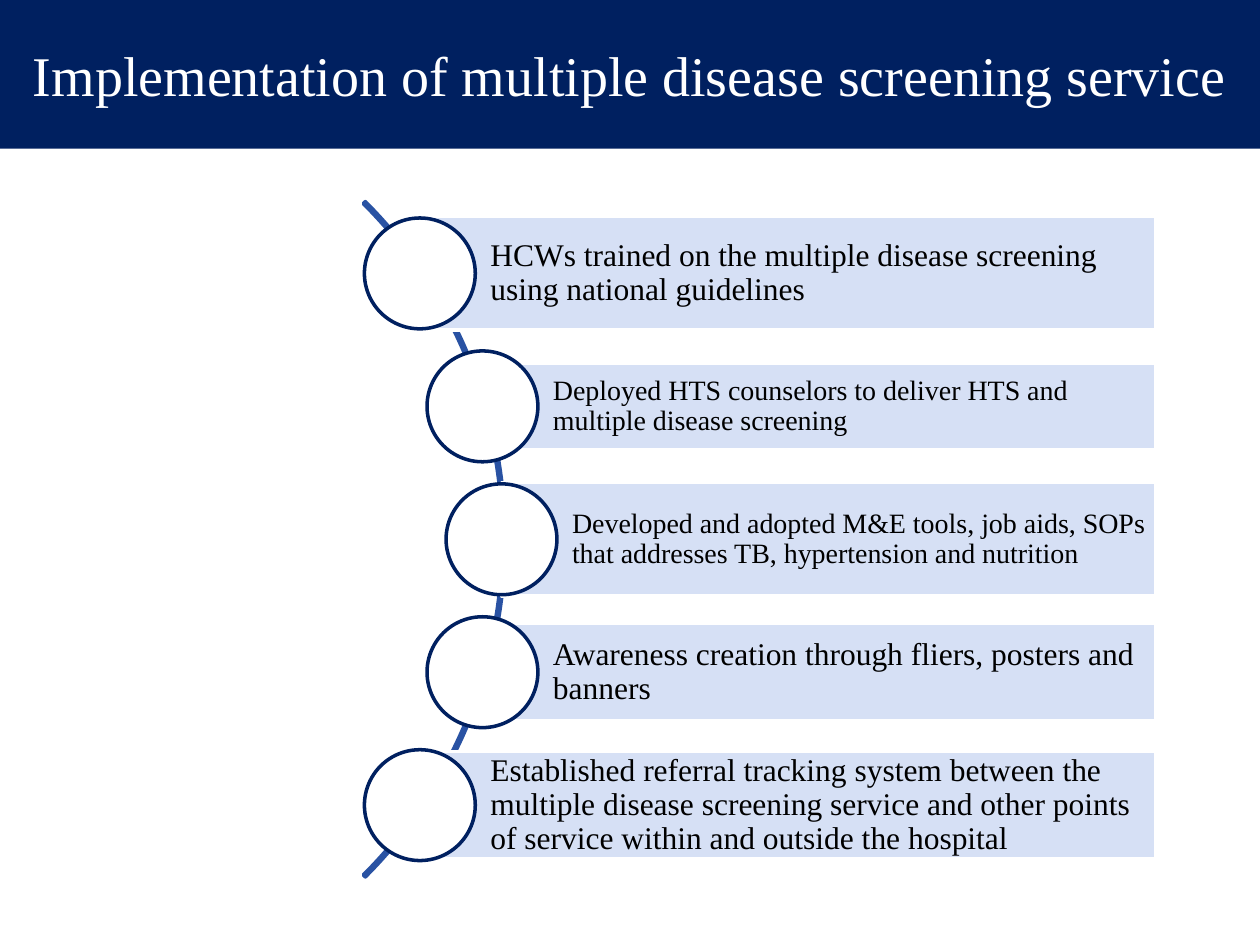
from math import sqrt

from pptx import Presentation
from pptx.dml.color import RGBColor
from pptx.enum.shapes import MSO_SHAPE
from pptx.enum.text import MSO_ANCHOR, PP_ALIGN
from pptx.util import Inches, Pt

RECTANGLE, OVAL, BLOCK_ARC = MSO_SHAPE.RECTANGLE, MSO_SHAPE.OVAL, MSO_SHAPE.BLOCK_ARC
LEFT, CENTER, MIDDLE = PP_ALIGN.LEFT, PP_ALIGN.CENTER, MSO_ANCHOR.MIDDLE

NAVY = RGBColor(0x00, 0x20, 0x60)
ARC_BLUE = RGBColor(0x29, 0x52, 0xA3)
PALE_BLUE = RGBColor(0xD6, 0xE0, 0xF5)
WHITE = RGBColor(0xFF, 0xFF, 0xFF)
BLACK = RGBColor(0x00, 0x00, 0x00)
FONT = "Times New Roman"

TITLE = "Implementation of multiple disease screening service"

# Step text, font size, bar height
STEPS = [
    ("HCWs trained on the multiple disease screening using national guidelines", 18, 0.9),
    ("Deployed HTS counselors to deliver HTS and multiple disease screening", 16, 0.69),
    ("Developed and adopted M&E tools, job aids, SOPs that addresses TB, "
     "hypertension and nutrition", 16, 0.9),
    ("Awareness creation through fliers, posters and banners", 18, 0.77),
    ("Established referral tracking system between the multiple disease screening "
     "service and other points of service within and outside the hospital", 18, 0.85),
]

# Geometry in inches: circles sit on an arc at an equal vertical pitch
ARC_X, ARC_Y, ARC_SIZE = 0.22, 4.28, 7.58
TRACK_RADIUS = 3.76
PITCH = 1.055
CIRCLE = 0.88
BAR_RIGHT = 9.17

prs = Presentation()
prs.slide_width, prs.slide_height = Inches(10), Inches(7.5)
slide = prs.slides.add_slide(prs.slide_layouts[6])


def add_part(preset, left, top, width, height, fill=None, line=None):
    part = slide.shapes.add_shape(
        preset, Inches(left), Inches(top), Inches(width), Inches(height))
    part.shadow.inherit = False
    if fill is None:
        part.fill.background()
    else:
        part.fill.solid()
        part.fill.fore_color.rgb = fill
    if line is None:
        part.line.fill.background()
    else:
        part.line.color.rgb = line
        part.line.width = Pt(2)
    return part


def write(part, text, size, color, align, left_inset, inset):
    frame = part.text_frame
    frame.word_wrap = True
    frame.vertical_anchor = MIDDLE
    frame.margin_left = Inches(left_inset)
    frame.margin_right = Inches(inset)
    frame.margin_top = frame.margin_bottom = Inches(0.05)
    paragraph = frame.paragraphs[0]
    paragraph.alignment = align
    run = paragraph.add_run()
    run.text = text
    run.font.name, run.font.size = FONT, Pt(size)
    run.font.color.rgb = color
    return paragraph


# Title band
title_band = add_part(RECTANGLE, 0, 0, 10, 1.18, NAVY)
write(title_band, TITLE, 32, WHITE, CENTER, 0.1, 0.1)

# Arc from 315 to 45 degrees (adjustments are in units of 5/3 degree)
arc = add_part(BLOCK_ARC, ARC_X - ARC_SIZE / 2, ARC_Y - ARC_SIZE / 2,
               ARC_SIZE, ARC_SIZE, line=ARC_BLUE)
for i, value in enumerate((189, 27, 0.003)):
    arc.adjustments[i] = value

# Steps: a bar starting at the centre of its circle
for i, (text, size, height) in enumerate(STEPS):
    offset = (i - (len(STEPS) - 1) / 2) * PITCH
    x = ARC_X + sqrt(TRACK_RADIUS ** 2 - offset ** 2)
    y = ARC_Y + offset
    bar = add_part(RECTANGLE, x, y - height / 2, BAR_RIGHT - x, height, PALE_BLUE, WHITE)
    inset = 0.05 if size == 18 else 0.04
    write(bar, text, size, BLACK, LEFT, 0.56, inset).line_spacing = 0.9
    add_part(OVAL, x - CIRCLE / 2, y - CIRCLE / 2, CIRCLE, CIRCLE, WHITE, NAVY)

prs.save("out.pptx")
